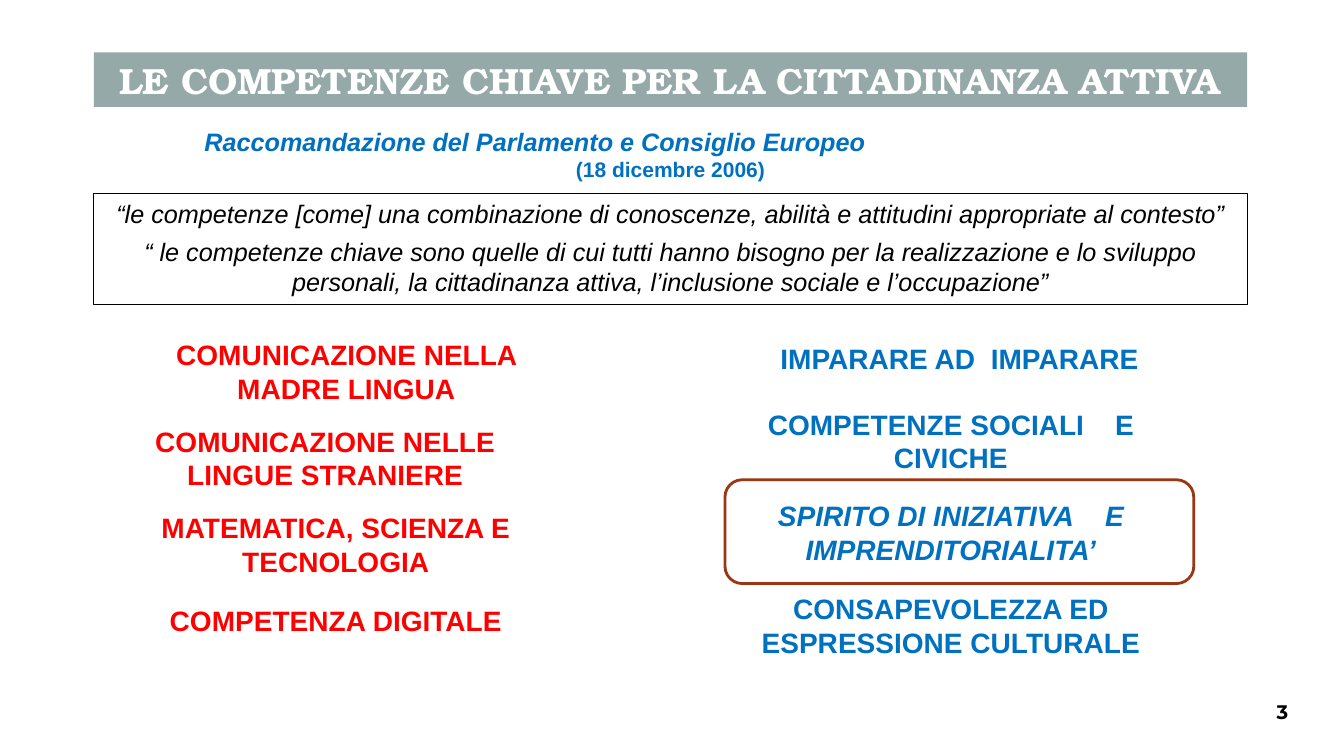
from pptx import Presentation
from pptx.dml.color import RGBColor
from pptx.enum.shapes import MSO_SHAPE
from pptx.enum.text import MSO_ANCHOR, MSO_AUTO_SIZE, PP_ALIGN
from pptx.util import Inches, Pt

WHITE = RGBColor(0xFF, 0xFF, 0xFF)
BLACK = RGBColor(0, 0, 0)
SAGE = RGBColor(0x96, 0xA9, 0xA9)
BLUE = RGBColor(0, 0x70, 0xC0)
RED = RGBColor(0xFF, 0, 0)
RUST = RGBColor(0x9C, 0x35, 0x11)
TITLE_ONLY = 5

# Each competence: offset down, offset across, width, italic, words, widened gap in points.
# The words are split where the gap is.
LEFT_COMPETENCES = [
    (0, 0, 4.33, False, ["COMUNICAZIONE NELLA MADRE LINGUA"], 0),
    (0.86, 0, 3.91, False, ["COMUNICAZIONE NELLE LINGUE STRANIERE"], 0),
    (1.72, 0, 4.12, False, ["MATEMATICA, SCIENZA E TECNOLOGIA"], 0),
    (2.64, 0, 4.12, False, ["COMPETENZA DIGITALE"], 0),
]
RIGHT_COMPETENCES = [
    (0.04, 0.17, 4.65, False, ["IMPARARE AD", "IMPARARE"], 5.5),
    (0.69, 0, 4.82, False, ["COMPETENZE SOCIALI", "E CIVICHE"], 16.5),
    (1.6, 0, 4.82, True, ["SPIRITO DI INIZIATIVA", "E IMPRENDITORIALITA’"], 16.5),
    (2.52, 0, 4.82, False, ["CONSAPEVOLEZZA ED ESPRESSIONE CULTURALE"], 0),
]


def set_frame(shape, anchor=MSO_ANCHOR.TOP):
    frame = shape.text_frame
    frame.word_wrap = True
    frame.auto_size = MSO_AUTO_SIZE.NONE
    frame.vertical_anchor = anchor
    return frame


def add_text_box(page, left, top, width, height, anchor=MSO_ANCHOR.TOP):
    box = page.shapes.add_textbox(Inches(left), Inches(top), Inches(width), Inches(height))
    return set_frame(box, anchor)


def add_outline(page, kind, left, top, width, height, color, weight):
    shape = page.shapes.add_shape(kind, Inches(left), Inches(top), Inches(width), Inches(height))
    shape.shadow.inherit = False
    shape.fill.background()
    shape.line.color.rgb = color
    shape.line.width = Pt(weight)
    return shape


def add_span(para, text, color, size, name="Arial", **styles):
    para.alignment = PP_ALIGN.CENTER
    span = para.add_run()
    span.text = text
    values = {"name": name, "size": Pt(size), "bold": False, "italic": False, **styles}
    for attribute, value in values.items():
        setattr(span.font, attribute, value)
    span.font.color.rgb = color
    return span


def add_title(page, left, top, width, height):
    title = page.shapes.title
    title.left, title.top = Inches(left), Inches(top)
    title.width, title.height = Inches(width), Inches(height)
    title.fill.solid()
    title.fill.fore_color.rgb = SAGE
    para = set_frame(title, MSO_ANCHOR.MIDDLE).paragraphs[0]
    add_span(para, "LE COMPETENZE CHIAVE PER LA CITTADINANZA ATTIVA", WHITE, 26,
             "TeX Gyre Bonum", bold=True)


def add_source_line(page, left, top, width, height):
    frame = add_text_box(page, left, top, width, height)
    heading = frame.paragraphs[0]
    add_span(heading, "Raccomandazione del Parlamento e Consiglio Europeo", BLUE, 18,
             bold=True, italic=True)
    # The heading starts one inch into the box
    heading.alignment = PP_ALIGN.LEFT
    heading._p.get_or_add_pPr().set("marL", str(Inches(1)))
    add_span(frame.add_paragraph(), "(18 dicembre 2006)", BLUE, 15, bold=True)


def add_quotes(page, left, top, width, height):
    panel = add_outline(page, MSO_SHAPE.RECTANGLE, left, top, width, height, BLACK, 0.75)
    frame = set_frame(panel)
    add_span(frame.paragraphs[0], "“le competenze [come] una combinazione di conoscenze, "
             "abilità e attitudini appropriate al contesto”", BLACK, 18, italic=True)
    para = frame.add_paragraph()
    para.space_before = Pt(5.5)
    add_span(para, "“ le competenze chiave sono quelle di cui tutti hanno bisogno per la "
             "realizzazione e lo sviluppo personali, la cittadinanza attiva, l’inclusione "
             "sociale e l’occupazione”", BLACK, 18, italic=True)


def add_competences(page, left, top, competences, color):
    for down, across, width, italic, parts, gap in competences:
        height = 0.44 if down in (0.04, 2.64) else 0.77
        para = add_text_box(page, left + across, top + down, width, height).paragraphs[0]
        for index, part in enumerate(parts):
            if index:
                space = add_span(para, " ", color, 20, bold=True, italic=italic)
                space.font._element.set("spc", str(int(gap * 100)))
            add_span(para, part, color, 20, bold=True, italic=italic)


def add_page_number(page, left, top, width, height):
    frame = add_text_box(page, left, top, width, height, MSO_ANCHOR.MIDDLE)
    add_span(frame.paragraphs[0], "3", BLACK, 14, "Montserrat", bold=True)


def main():
    deck = Presentation()
    deck.slide_width, deck.slide_height = Inches(13.33), Inches(7.5)
    page = deck.slides.add_slide(deck.slide_layouts[TITLE_ONLY])

    # Heading and quotations share one width
    left, width = 0.93, 11.44
    add_title(page, left, 0.52, width, 0.54)
    add_source_line(page, left, 1.2, width, 0.66)
    add_quotes(page, left, 1.92, width, 1.1)

    # Two columns of competences, one of them framed
    add_competences(page, 1.27, 3.3, LEFT_COMPETENCES, RED)
    add_competences(page, 7.02, 3.3, RIGHT_COMPETENCES, BLUE)
    add_outline(page, MSO_SHAPE.ROUNDED_RECTANGLE, 7.19, 4.76, 4.65, 1.03, RUST, 2)

    add_page_number(page, 12.37, 6.86, 0.7, 0.4)
    deck.save("out.pptx")


if __name__ == "__main__":
    main()
